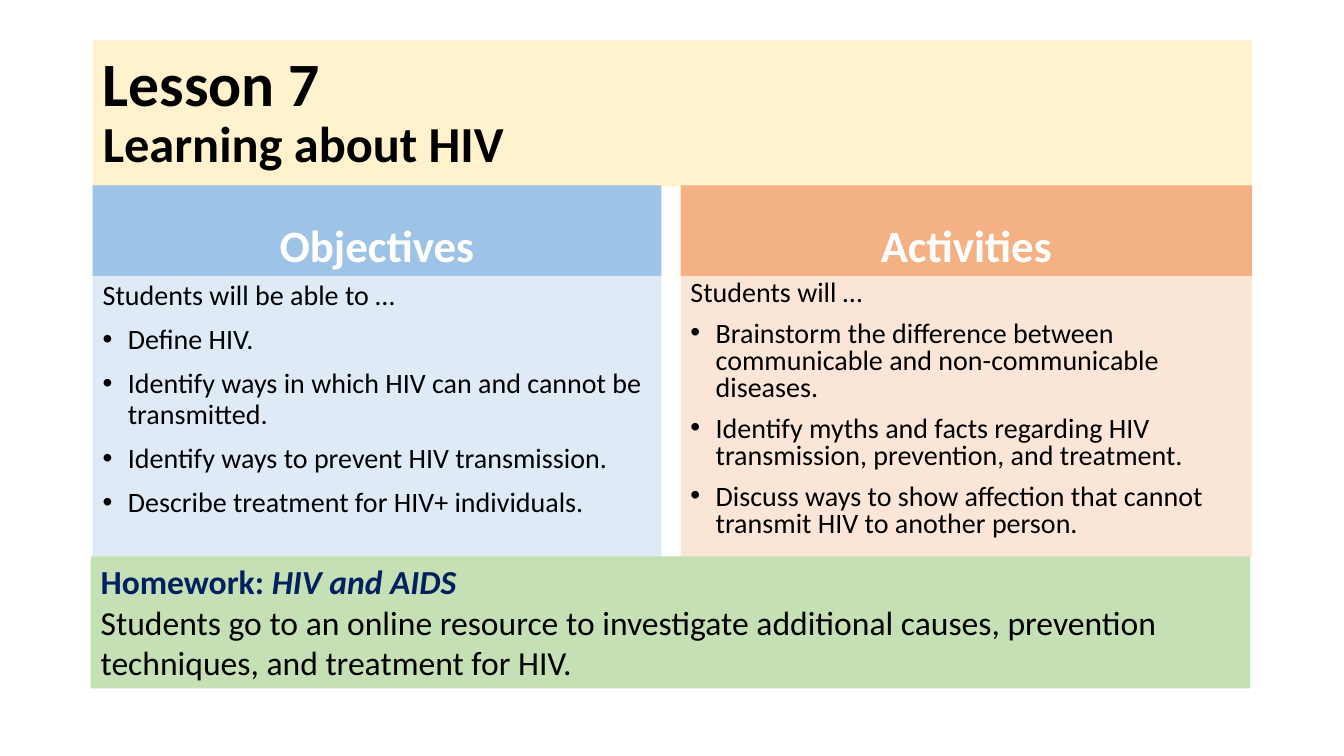
from lxml import etree
from pptx import Presentation
from pptx.dml.color import RGBColor
from pptx.enum.text import MSO_ANCHOR, MSO_AUTO_SIZE, PP_ALIGN
from pptx.oxml.ns import qn
from pptx.util import Inches, Pt

LEFT, CENTER = PP_ALIGN.LEFT, PP_ALIGN.CENTER
TOP, MIDDLE, BOTTOM = MSO_ANCHOR.TOP, MSO_ANCHOR.MIDDLE, MSO_ANCHOR.BOTTOM
NO_AUTOFIT = MSO_AUTO_SIZE.NONE
FONT = "Calibri"
COLORS = {
    "black": "000000",
    "white": "FFFFFF",
    "navy": "002060",
    "title": "FFF2CC",
    "homework": "C5E0B4",
    "objectives_head": "9DC3E6",
    "objectives_body": "DEEBF7",
    "activities_head": "F4B183",
    "activities_body": "FBE5D6",
}


def style_panel(shape, left, top, width, height, fill, anchor):
    shape.left, shape.top = Inches(left), Inches(top)
    shape.width, shape.height = Inches(width), Inches(height)
    shape.fill.solid()
    shape.fill.fore_color.rgb = RGBColor.from_string(COLORS[fill])
    frame = shape.text_frame
    frame.word_wrap = True
    frame.auto_size = NO_AUTOFIT
    frame.vertical_anchor = anchor
    return frame


def add_text(paragraph, text, size, color="black", bold=False, italic=False):
    run = paragraph.add_run()
    run.text = text
    run.font.name = FONT
    run.font.size = Pt(size)
    run.font.bold = bold
    run.font.italic = italic
    run.font.color.rgb = RGBColor.from_string(COLORS[color])


presentation = Presentation()
presentation.slide_width = Inches(13.33)
presentation.slide_height = Inches(7.5)
slide = presentation.slides.add_slide(presentation.slide_layouts[5])

title_frame = style_panel(slide.shapes.title, 0.92, 0.4, 11.5, 1.45, "title", MIDDLE)
title_paragraph = title_frame.paragraphs[0]
title_paragraph.alignment = LEFT
title_paragraph.line_spacing = 0.9
add_text(title_paragraph, "Lesson 7", 44, bold=True)
title_paragraph.add_line_break()
add_text(title_paragraph, "Learning about HIV", 36, bold=True)

columns = [
    ("Objectives", "objectives", 0.92, 5.64, 0.9, [
        "Students will be able to …",
        "Define HIV.",
        "Identify ways in which HIV can and cannot be transmitted.",
        "Identify ways to prevent HIV transmission.",
        "Describe treatment for HIV+ individuals.",
    ]),
    ("Activities", "activities", 6.75, 5.67, 0.8, [
        "Students will …",
        "Brainstorm the difference between communicable and non-communicable diseases.",
        "Identify myths and facts regarding HIV transmission, prevention, and treatment.",
        "Discuss ways to show affection that cannot transmit HIV to another person.",
    ]),
]

for heading, color, left, width, line_spacing, lines in columns:
    head_box = slide.shapes.add_textbox(0, 0, 0, 0)
    head_frame = style_panel(head_box, left, 1.84, width, 0.9, f"{color}_head", BOTTOM)
    head_frame.paragraphs[0].alignment = CENTER
    add_text(head_frame.paragraphs[0], heading, 32, "white", bold=True)

    body_box = slide.shapes.add_textbox(0, 0, 0, 0)
    body_frame = style_panel(body_box, left, 2.74, width, 2.79, f"{color}_body", TOP)
    for index, line in enumerate(lines):
        paragraph = body_frame.add_paragraph() if index else body_frame.paragraphs[0]
        paragraph.line_spacing = line_spacing
        paragraph.space_before = Pt(10)
        if index:
            properties = paragraph._p.get_or_add_pPr()
            properties.set("marL", str(Inches(0.25)))
            properties.set("indent", str(-Inches(0.25)))
            etree.SubElement(properties, qn("a:buFont")).set("typeface", "Arial")
            etree.SubElement(properties, qn("a:buChar")).set("char", "•")
        add_text(paragraph, line, 20)

homework_box = slide.shapes.add_textbox(0, 0, 0, 0)
homework_frame = style_panel(homework_box, 0.9, 5.52, 11.5, 1.31, "homework", TOP)
homework_heading = homework_frame.paragraphs[0]
add_text(homework_heading, "Homework: ", 24, "navy", bold=True)
add_text(homework_heading, "HIV and AIDS", 24, "navy", bold=True, italic=True)
add_text(
    homework_frame.add_paragraph(),
    "Students go to an online resource to investigate additional causes, "
    "prevention techniques, and treatment for HIV.",
    24,
)

presentation.save("out.pptx")
